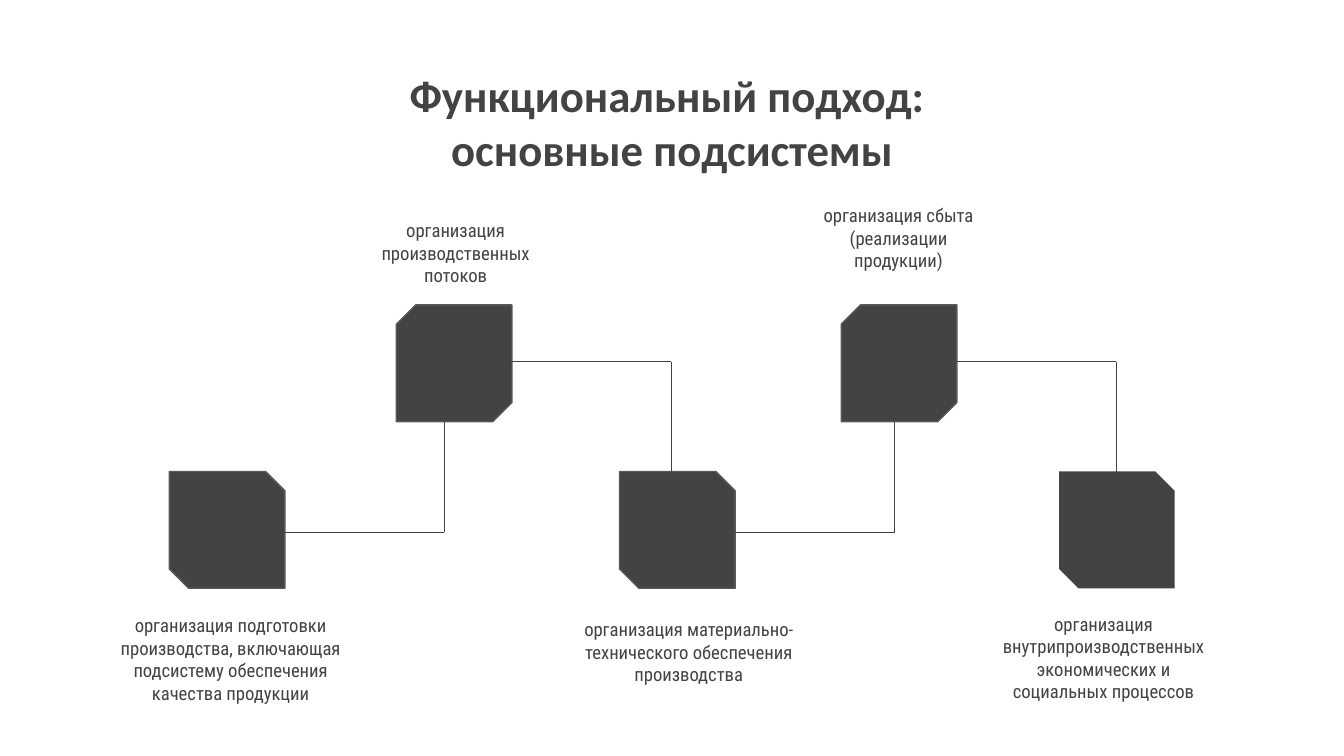
import pptx
import pptx.dml.color
import pptx.enum.shapes
import pptx.enum.text
import pptx.oxml
import pptx.oxml.ns
import pptx.util

Pt = pptx.util.Pt
DARK = "434343"
EDGE = "595959"
BLOCK_WIDTH, BLOCK_HEIGHT = 61.9, 62.6
LOWER_TOP, UPPER_TOP = 252.6, 163.4
LINK_INDENT, LINK_WIDTH, LINK_HEIGHT = 29.2, 118.1, 72
LOWER_LINK, UPPER_LINK = 285.2, 193.8
INSET = 7.2

TITLE = "Функциональный подход: \vосновные подсистемы"
TITLE_FORMAT = {"size": Pt(24), "name": "Calibri", "bold": True}
CAPTION_FORMAT = {"size": Pt(10), "name": "Roboto Condensed"}

# Block left, caption box (left, top, width), caption
SUBSYSTEMS = [
    (90.7, (53.3, 321.8, 140.4),
     "организация подготовки производства, включающая подсистему обеспечения качества продукции"),
    (212.4, (191.5, 110.2, 105.1),
     "организация производственных потоков"),
    (331.9, (293, 324, 151.9),
     "организация материально-технического обеспечения производства"),
    (450.7, (432.7, 102.2, 97.2),
     "организация сбыта (реализации продукции)"),
    (567.4, (524.2, 321.1, 133.9),
     "организация внутрипроизводственных экономических и социальных процессов"),
]


def color(value):
    return pptx.dml.color.RGBColor.from_string(value)


def add_text(page, place, text, formats, anchor):
    box = page.shapes.add_textbox(*map(Pt, place))
    frame = box.text_frame
    settings = {"word_wrap": True, "vertical_anchor": anchor}
    for side in ("left", "top", "right", "bottom"):
        settings["margin_" + side] = Pt(INSET)
    for name, value in settings.items():
        setattr(frame, name, value)
    para = frame.paragraphs[0]
    para.text = text
    para.alignment = pptx.enum.text.PP_ALIGN.CENTER
    for span in para.runs:
        for name, value in formats.items():
            setattr(span.font, name, value)
        span.font.color.rgb = color(DARK)


def add_line(page, *ends):
    line = page.shapes.add_connector(
        pptx.enum.shapes.MSO_CONNECTOR.STRAIGHT, *map(Pt, ends))
    line.line.color.rgb = color(DARK)
    line.line.width = Pt(0.75)
    line._element.spPr.append(pptx.oxml.parse_xml(
        "<a:effectLst %s/>" % pptx.oxml.ns.nsdecls("a")))


def add_link(page, block_left, upper):
    """Draw the horizontal and vertical lines that lead to the next block."""
    start = block_left + LINK_INDENT
    corner = start + LINK_WIDTH
    level = UPPER_LINK if upper else LOWER_LINK
    end = level + LINK_HEIGHT if upper else level - LINK_HEIGHT
    add_line(page, start, level, corner, level)
    add_line(page, corner, level, corner, end)


def add_block(page, left, upper, outlined):
    """Draw a square with two opposite corners cut; upper ones are mirrored."""
    top = UPPER_TOP if upper else LOWER_TOP
    block = page.shapes.add_shape(
        pptx.enum.shapes.MSO_SHAPE.SNIP_2_DIAG_RECTANGLE,
        *map(Pt, (left, top, BLOCK_WIDTH, BLOCK_HEIGHT)))
    cuts = (0.167, 0) if upper else (0, 0.167)
    for index, cut in enumerate(cuts):
        block.adjustments[index] = cut
    block.shadow.inherit = False
    block.fill.solid()
    block.fill.fore_color.rgb = color(DARK)
    if outlined:
        block.line.color.rgb = color(EDGE)
        block.line.width = Pt(0.75)
    else:
        block.line.fill.background()


def main():
    deck = pptx.Presentation()
    deck.slide_width, deck.slide_height = Pt(720), Pt(405)
    page = deck.slides.add_slide(deck.slide_layouts[6])
    anchors = pptx.enum.text.MSO_ANCHOR

    add_text(page, (154.8, 28.1, 410.4, 74.2), TITLE, TITLE_FORMAT, anchors.MIDDLE)
    last = len(SUBSYSTEMS) - 1
    for index, (left, (box_left, box_top, box_width), caption) in enumerate(SUBSYSTEMS):
        upper = index % 2 == 1
        add_block(page, left, upper, outlined=index < last)
        if index < last:
            add_link(page, left, upper)
        add_text(page, (box_left, box_top, box_width, 47.5), caption,
                 CAPTION_FORMAT, anchors.TOP)
    deck.save("out.pptx")


if __name__ == "__main__":
    main()
